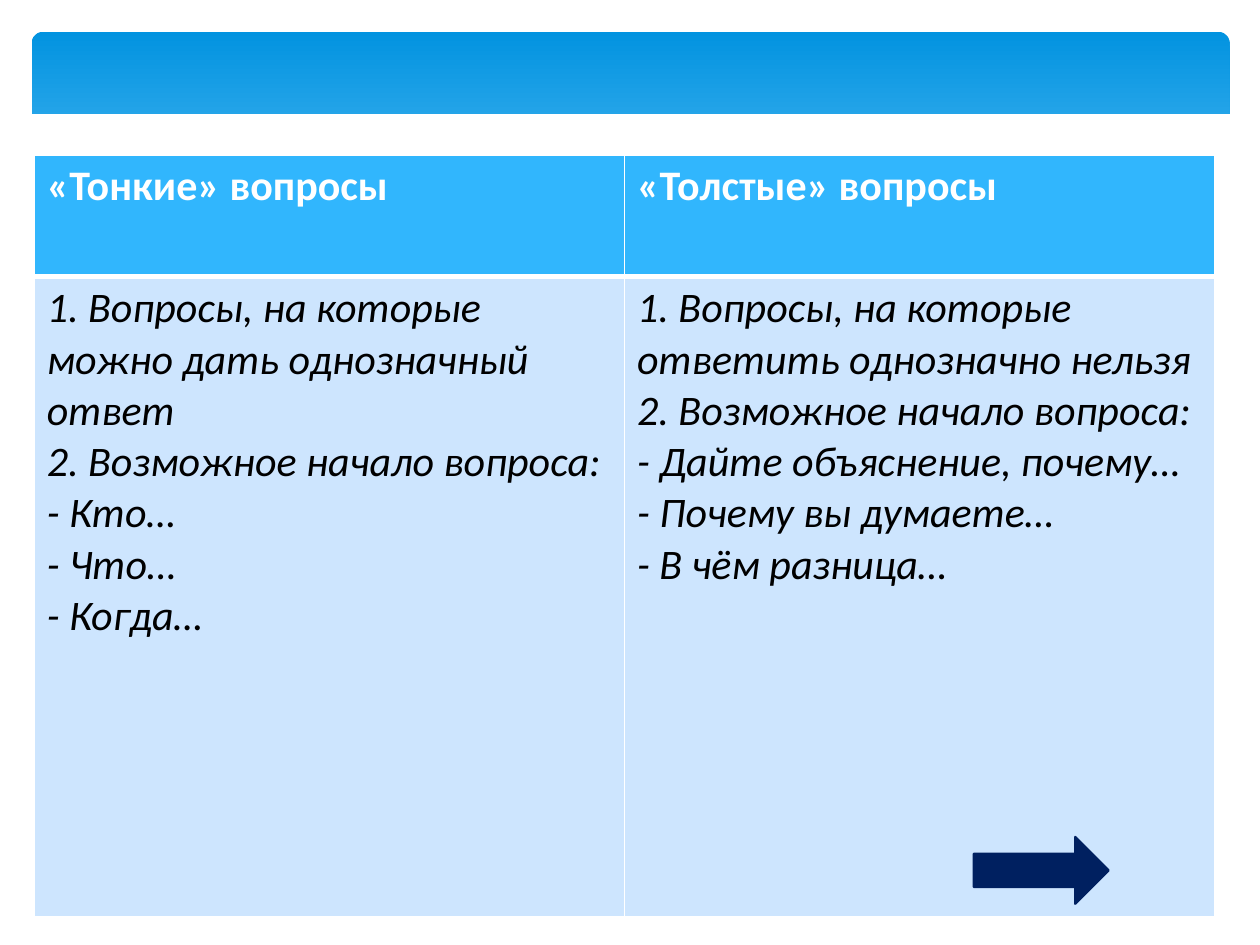
from dataclasses import dataclass

from lxml import etree
from pptx import Presentation
from pptx.dml.color import RGBColor
from pptx.enum.shapes import MSO_SHAPE
from pptx.oxml.ns import qn
from pptx.util import Cm, Pt

ROUNDED = MSO_SHAPE.ROUNDED_RECTANGLE
RECTANGLE = MSO_SHAPE.RECTANGLE
LEFT_ARROW = MSO_SHAPE.LEFT_ARROW


@dataclass(frozen=True)
class Theme:
    font: str = "Calibri"
    text_size: int = 24
    white: str = "FFFFFF"
    black: str = "000000"
    header: str = "31B6FD"
    body: str = "CDE5FE"
    navy: str = "002060"
    band_top: str = "0293E0"
    band_bottom: str = "83D3FE"
    thin_border: int = 1
    thick_border: int = 3


@dataclass(frozen=True)
class Frame:
    """A place on the slide, in centimetres."""
    left: float
    top: float
    width: float
    height: float

    def lengths(self) -> tuple:
        return Cm(self.left), Cm(self.top), Cm(self.width), Cm(self.height)


@dataclass(frozen=True)
class Column:
    heading: str
    lines: tuple


THEME = Theme()
BAND = Frame(0.64, 0.64, 24.15, 6.86)
COVER = Frame(0, 2.31, 25.4, 7.21)
TABLE = Frame(0.69, 3.12, 23.8, 15.37)
ARROW = Frame(19.63, 16.87, 2.72, 1.35)
HEADER_HEIGHT = 2.46

COLUMNS = (
    Column("«Тонкие» вопросы", (
        "1. Вопросы, на которые можно дать однозначный ответ",
        "2. Возможное начало вопроса:",
        "- Кто…",
        "- Что…",
        "- Когда…",
    )),
    Column("«Толстые» вопросы", (
        "1. Вопросы, на которые ответить однозначно нельзя",
        "2. Возможное начало вопроса:",
        "- Дайте объяснение, почему…",
        "- Почему вы думаете…",
        "- В чём разница…",
    )),
)


def rgb(value: str) -> RGBColor:
    return RGBColor.from_string(value)


def add_band(slide) -> None:
    band = slide.shapes.add_shape(ROUNDED, *BAND.lengths())
    band.shadow.inherit = False
    band.adjustments[0] = 0.034
    band.line.fill.background()
    band.fill.gradient()
    band.fill.gradient_angle = 270
    first, last = band.fill.gradient_stops
    first.color.rgb, first.position = rgb(THEME.band_top), 0
    last.color.rgb, last.position = rgb(THEME.band_bottom), 0.9


def add_plain_shape(slide, kind, frame: Frame, color: str, line_width: float):
    shape = slide.shapes.add_shape(kind, *frame.lengths())
    shape.shadow.inherit = False
    shape.fill.solid()
    shape.fill.fore_color.rgb = rgb(color)
    shape.line.color.rgb = rgb(color)
    shape.line.width = Pt(line_width)
    return shape


def set_borders(cell, top: int, bottom: int) -> None:
    """Draw white cell borders; call before the cell gets its fill."""
    properties = cell._tc.get_or_add_tcPr()
    thin = THEME.thin_border
    for side, width in (("L", thin), ("R", thin), ("T", top), ("B", bottom)):
        line = etree.SubElement(properties, qn(f"a:ln{side}"), w=str(Pt(width)))
        solid = etree.SubElement(line, qn("a:solidFill"))
        etree.SubElement(solid, qn("a:srgbClr"), val=THEME.white)


def fill_cell(cell, lines: tuple, is_header: bool) -> None:
    thin, thick = THEME.thin_border, THEME.thick_border
    set_borders(cell, *((thin, thick) if is_header else (thick, thin)))
    cell.fill.solid()
    cell.fill.fore_color.rgb = rgb(THEME.header if is_header else THEME.body)
    for index, text in enumerate(lines):
        frame = cell.text_frame
        para = frame.add_paragraph() if index else frame.paragraphs[0]
        span = para.add_run()
        span.text = text
        span.font.name = THEME.font
        span.font.size = Pt(THEME.text_size)
        span.font.bold = is_header
        span.font.italic = not is_header
        span.font.color.rgb = rgb(THEME.white if is_header else THEME.black)


def add_question_table(slide) -> None:
    table = slide.shapes.add_table(2, len(COLUMNS), *TABLE.lengths()).table
    table.horz_banding = False
    table.rows[0].height = Cm(HEADER_HEIGHT)
    table.rows[1].height = Cm(TABLE.height - HEADER_HEIGHT)
    for index, column in enumerate(COLUMNS):
        table.columns[index].width = Cm(TABLE.width / len(COLUMNS))
        fill_cell(table.cell(0, index), (column.heading,), True)
        fill_cell(table.cell(1, index), column.lines, False)


def main() -> None:
    deck = Presentation()
    deck.slide_width, deck.slide_height = Cm(25.4), Cm(19.05)
    page = deck.slides.add_slide(deck.slide_layouts[6])
    add_band(page)
    add_plain_shape(page, RECTANGLE, COVER, THEME.white, 0.75)
    add_question_table(page)
    arrow = add_plain_shape(page, LEFT_ARROW, ARROW, THEME.navy, 1.25)
    arrow.rotation = 180
    deck.save("out.pptx")


if __name__ == "__main__":
    main()
